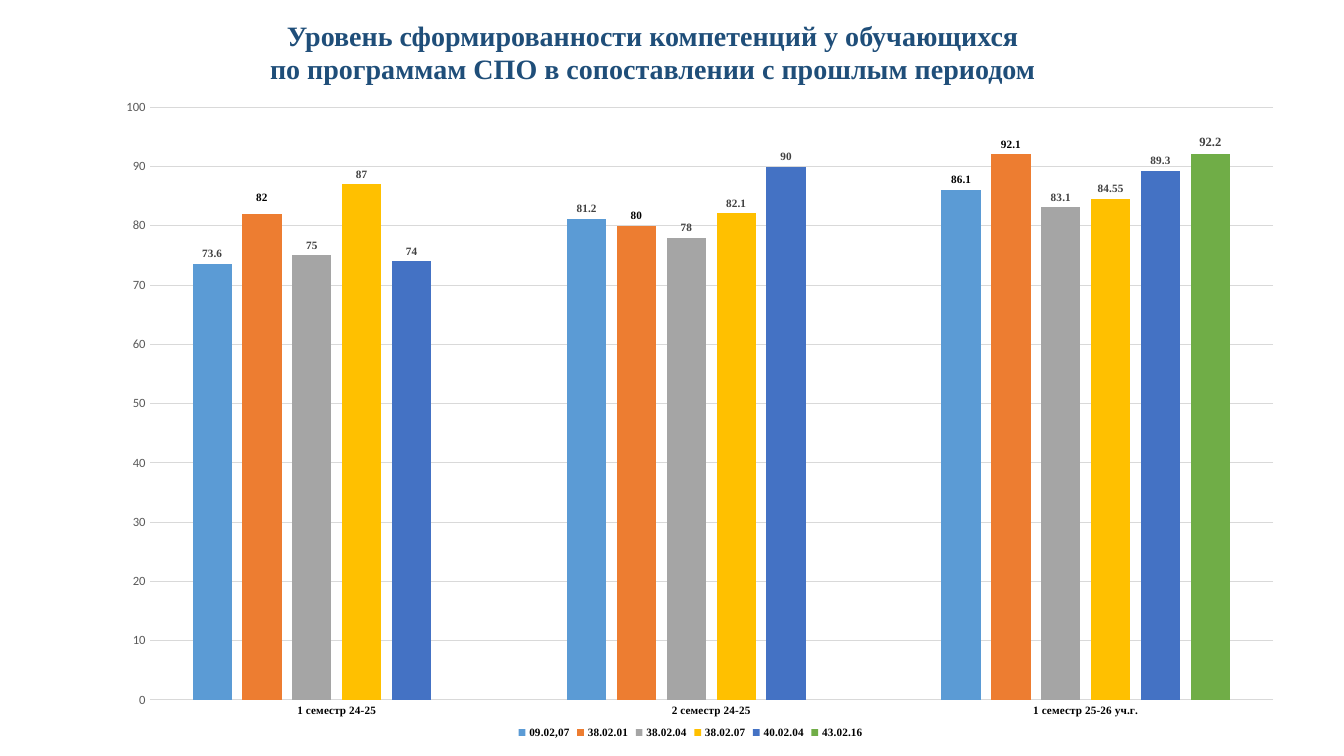
"""Build a slide comparing competence levels by programme and semester."""
from pptx import Presentation
from pptx.chart.data import CategoryChartData
from pptx.dml.color import RGBColor
from pptx.enum.chart import XL_CHART_TYPE as ChartType
from pptx.enum.chart import XL_LABEL_POSITION as LabelPosition
from pptx.enum.chart import XL_LEGEND_POSITION as LegendPosition
from pptx.enum.chart import XL_TICK_MARK as TickMark
from pptx.enum.dml import MSO_LINE
from pptx.enum.text import PP_ALIGN
from pptx.oxml import parse_xml
from pptx.oxml.ns import nsdecls, qn
from pptx.util import Inches, Pt

NAVY = RGBColor(0x1F, 0x4E, 0x79)
BLACK = RGBColor(0, 0, 0)
DARK_GREY = RGBColor(0x40, 0x40, 0x40)
GREY = RGBColor(0x59, 0x59, 0x59)
LIGHT_GREY = RGBColor(0xD9, 0xD9, 0xD9)
BLUE = RGBColor(0x5B, 0x9B, 0xD5)
ORANGE = RGBColor(0xED, 0x7D, 0x31)
SILVER = RGBColor(0xA5, 0xA5, 0xA5)
YELLOW = RGBColor(0xFF, 0xC0, 0x00)
INDIGO = RGBColor(0x44, 0x72, 0xC4)
GREEN = RGBColor(0x70, 0xAD, 0x47)
SERIF = "Times New Roman"
SANS = "Calibri"

TITLE = [
    "Уровень сформированности компетенций у обучающихся",
    "по программам СПО в сопоставлении с прошлым периодом",
]
SEMESTERS = ["1 семестр 24-25", "2 семестр 24-25", "1 семестр 25-26 уч.г."]
PROGRAMMES = [
    ("09.02,07", (73.6, 81.2, 86.1), BLUE, DARK_GREY, 8),
    ("38.02.01", (82, 80, 92.1), ORANGE, BLACK, 8),
    ("38.02.04", (75, 78, 83.1), SILVER, DARK_GREY, 8),
    ("38.02.07", (87, 82.1, 84.55), YELLOW, DARK_GREY, 8),
    ("40.02.04", (74, 90, 89.3), INDIGO, DARK_GREY, 8),
    ("43.02.16", (None, None, 92.2), GREEN, DARK_GREY, 9),
]
PLOT_AREA = {"x": 0.055, "y": 0.024, "w": 0.924, "h": 0.91}
RAISED_LABEL = {"x": 0, "y": -0.01}


def style(font, size, color, name=SERIF, bold=True):
    font.size, font.name, font.bold = Pt(size), name, bold
    font.color.rgb = color


def manual_layout(values, modes=""):
    places = "".join(f'<c:{key} val="{value}"/>' for key, value in values.items())
    return parse_xml(
        f'<c:layout {nsdecls("c")}><c:manualLayout>{modes}{places}'
        "</c:manualLayout></c:layout>"
    )


def add_title(slide):
    title = slide.shapes.add_textbox(
        Inches(0.07), Inches(0.13), Inches(12.81), Inches(1.38)
    ).text_frame
    title.word_wrap = True
    title.text = "\n".join(TITLE)
    for line in title.paragraphs:
        line.alignment = PP_ALIGN.CENTER
        style(line.runs[0].font, 20, NAVY)


def style_axes(chart):
    semesters, levels = chart.category_axis, chart.value_axis
    for axis in (semesters, levels):
        axis.major_tick_mark = axis.minor_tick_mark = TickMark.NONE
    style(semesters.tick_labels.font, 8, BLACK)
    style(levels.tick_labels.font, 9, GREY, SANS, False)
    levels.minimum_scale, levels.maximum_scale, levels.major_unit = 0, 100, 10
    levels.format.line.fill.background()
    for line in (semesters.format.line, levels.major_gridlines.format.line):
        line.color.rgb = LIGHT_GREY
        line.width = Pt(0.75)
        line.dash_style = MSO_LINE.SOLID


def style_programmes(plot):
    for programme, (_, _, color, label_color, size) in zip(plot.series, PROGRAMMES):
        programme.format.fill.solid()
        programme.format.fill.fore_color.rgb = color
        programme.invert_if_negative = False
        labels = programme.data_labels
        labels.show_value = True
        labels.position = LabelPosition.OUTSIDE_END
        style(labels.font, size, label_color)
    for programme, semester in ((0, 2), (1, 0)):
        label = plot.series[programme].points[semester].data_label
        style(label.font, 8, BLACK)
        label.position = LabelPosition.OUTSIDE_END
    raised = plot.series[1].data_labels._element.find(qn("c:dLbl"))
    raised.find(qn("c:idx")).addnext(manual_layout(RAISED_LABEL))


def add_levels_chart(slide):
    data = CategoryChartData()
    data.categories = SEMESTERS
    for name, values, *_ in PROGRAMMES:
        data.add_series(name, values)
    chart = slide.shapes.add_chart(
        ChartType.COLUMN_CLUSTERED,
        Inches(0.82), Inches(0.91), Inches(12.06), Inches(6.46), data,
    ).chart
    chart.has_title = False
    style(chart.font, 10, BLACK, SANS, False)
    chart.has_legend = True
    chart.legend.position = LegendPosition.BOTTOM
    chart.legend.include_in_layout = False
    style(chart.legend.font, 8, BLACK)
    plot = chart.plots[0]
    plot.gap_width, plot.overlap, plot.vary_by_categories = 219, -27, False
    style_axes(chart)
    style_programmes(plot)
    plot_area = chart._chartSpace.chart.plotArea
    for layout in plot_area.findall(qn("c:layout")):
        plot_area.remove(layout)
    modes = (
        '<c:layoutTarget val="inner"/>'
        '<c:xMode val="edge"/><c:yMode val="edge"/>'
    )
    plot_area.insert(0, manual_layout(PLOT_AREA, modes))


def main():
    deck = Presentation()
    deck.slide_width, deck.slide_height = Inches(13.33), Inches(7.5)
    slide = deck.slides.add_slide(deck.slide_layouts[6])
    add_title(slide)
    add_levels_chart(slide)
    deck.save("out.pptx")


if __name__ == "__main__":
    main()
